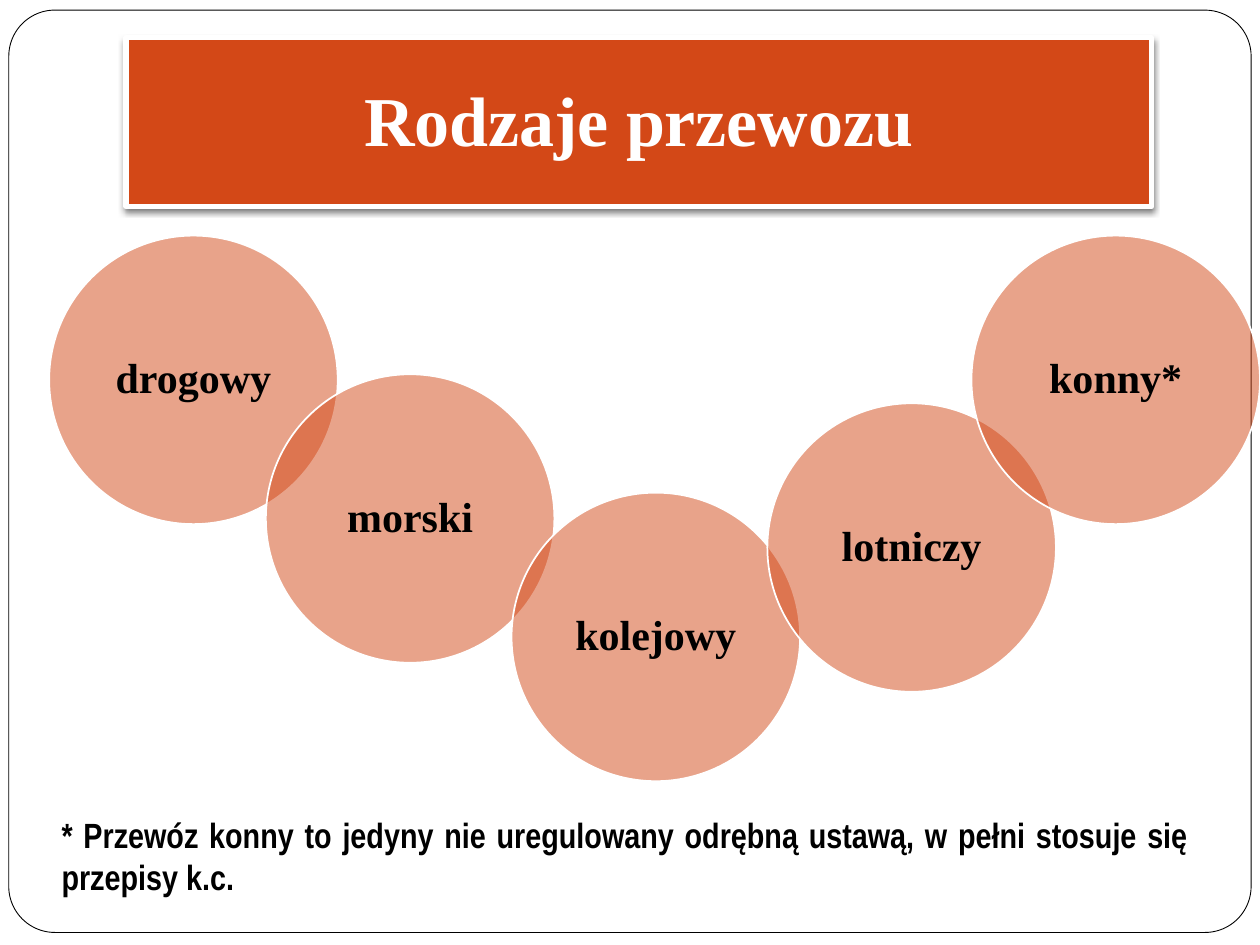
from dataclasses import dataclass

from lxml.etree import SubElement
from pptx import Presentation
from pptx.dml.color import RGBColor as Color
from pptx.enum.shapes import MSO_SHAPE as Preset
from pptx.enum.text import MSO_ANCHOR as Anchor, MSO_AUTO_SIZE as AutoSize, PP_ALIGN as Align
from pptx.oxml.ns import qn
from pptx.util import Inches, Pt


@dataclass(frozen=True)
class Theme:
    accent: Color = Color.from_string("D34817")
    light: Color = Color.from_string("FFFFFF")
    dark: Color = Color.from_string("000000")
    serif: str = "Times New Roman"
    narrow: str = "Arial Narrow"
    title_size: Pt = Pt(40)
    label_size: Pt = Pt(24)
    note_size: Pt = Pt(20)


theme = Theme()
presentation = Presentation()
presentation.slide_width = Inches(10)
presentation.slide_height = Inches(7.5)
column = presentation.slide_width / 100
row = presentation.slide_height / 100
slide = presentation.slides.add_slide(presentation.slide_layouts[6])


def add_panel(preset, left, top, width, height, fill, line, weight):
    shape = slide.shapes.add_shape(
        preset, int(left * column), int(top * row), int(width * column), int(height * row)
    )
    shape.shadow.inherit = False
    shape.fill.solid()
    shape.fill.fore_color.rgb = fill
    shape.line.color.rgb = line
    shape.line.width = Pt(weight)
    return shape


def write(shape, text, font_name, size, color, alignment):
    frame = shape.text_frame
    frame.word_wrap = True
    frame.text = text
    paragraph = frame.paragraphs[0]
    paragraph.alignment = alignment
    font = paragraph.runs[0].font
    font.name = font_name
    font.size = size
    font.bold = True
    font.color.rgb = color
    return paragraph


border = add_panel(Preset.ROUNDED_RECTANGLE, 0.7, 1.07, 98.6, 97.6, theme.light, theme.dark, 0.5)
border.adjustments[0] = 0.05

diameter = 22.9
transport_types = [
    ("drogowy", 3.9, 24.93),
    ("morski", 21.1, 39.6),
    ("kolejowy", 40.6, 52.13),
    ("lotniczy", 60.9, 42.67),
    ("konny*", 77.1, 24.93),
]
for name, left, top in transport_types:
    circle = add_panel(
        Preset.OVAL, left, top, diameter, diameter * column / row, theme.accent, theme.light, 1
    )
    color_element = circle.fill._xPr.find(qn("a:solidFill"))[0]
    SubElement(color_element, qn("a:alpha"), val="50000")
    frame = circle.text_frame
    frame.vertical_anchor = Anchor.MIDDLE
    frame.margin_left = frame.margin_right = Inches(0.13)
    frame.margin_top = frame.margin_bottom = Inches(0.03)
    paragraph = write(circle, name, theme.serif, theme.label_size, theme.dark, Align.CENTER)
    paragraph.line_spacing = 0.9

title = add_panel(Preset.RECTANGLE, 10, 4, 81.4, 17.87, theme.accent, theme.light, 3)
title.text_frame.vertical_anchor = Anchor.MIDDLE
title.text_frame.margin_bottom = Inches(0.1)
write(title, "Rodzaje przewozu", theme.serif, theme.title_size, theme.light, Align.CENTER)
effects = title._element.spPr.find(qn("a:effectLst"))
shadow = SubElement(
    effects, qn("a:outerShdw"), blurRad=str(Pt(3)), dist=str(Pt(2)), dir="5400000", rotWithShape="0"
)
shadow_color = SubElement(shadow, qn("a:srgbClr"), val=str(theme.dark))
SubElement(shadow_color, qn("a:alpha"), val="50000")

note = slide.shapes.add_textbox(
    int(3.9 * column), int(85.47 * row), int(91.4 * column), int(10.27 * row)
)
note.text_frame.auto_size = AutoSize.SHAPE_TO_FIT_TEXT
write(
    note,
    "* Przewóz konny to jedyny nie uregulowany odrębną ustawą, w pełni stosuje się przepisy k.c.",
    theme.narrow,
    theme.note_size,
    theme.dark,
    Align.JUSTIFY,
)

presentation.save("out.pptx")
